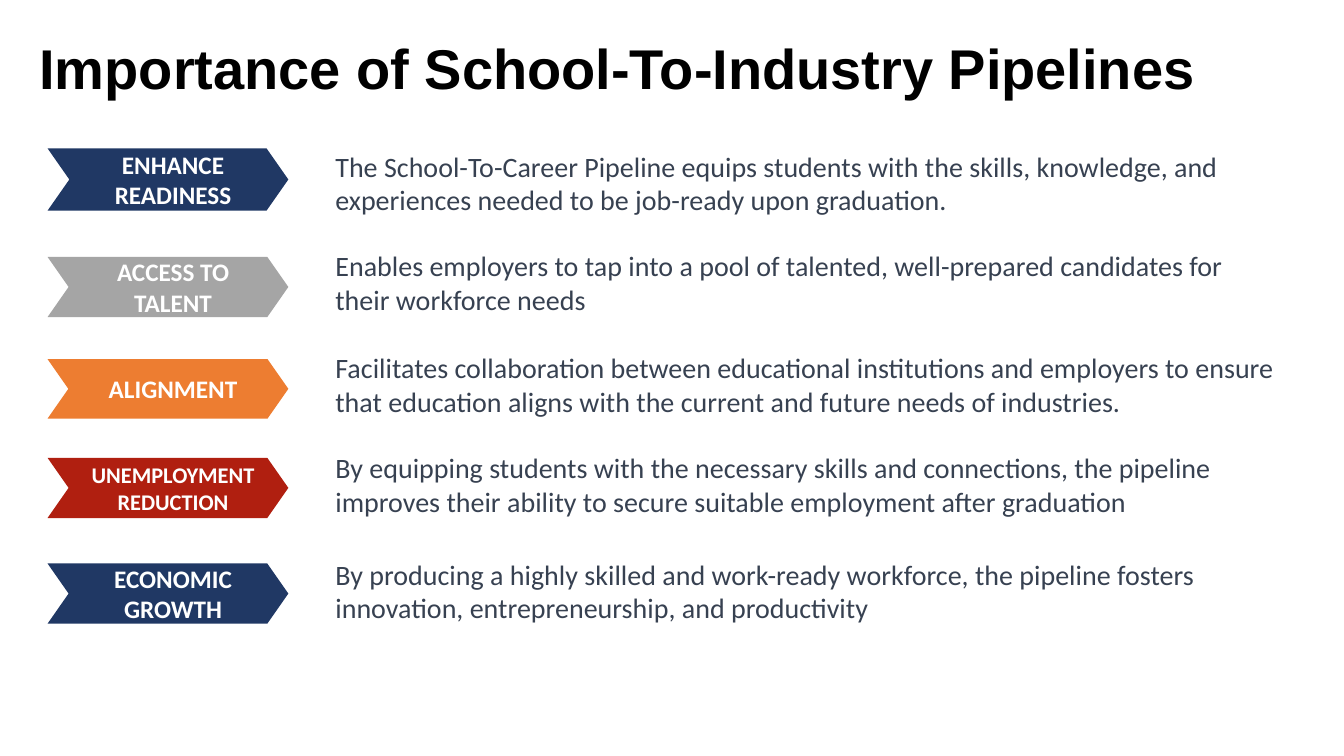
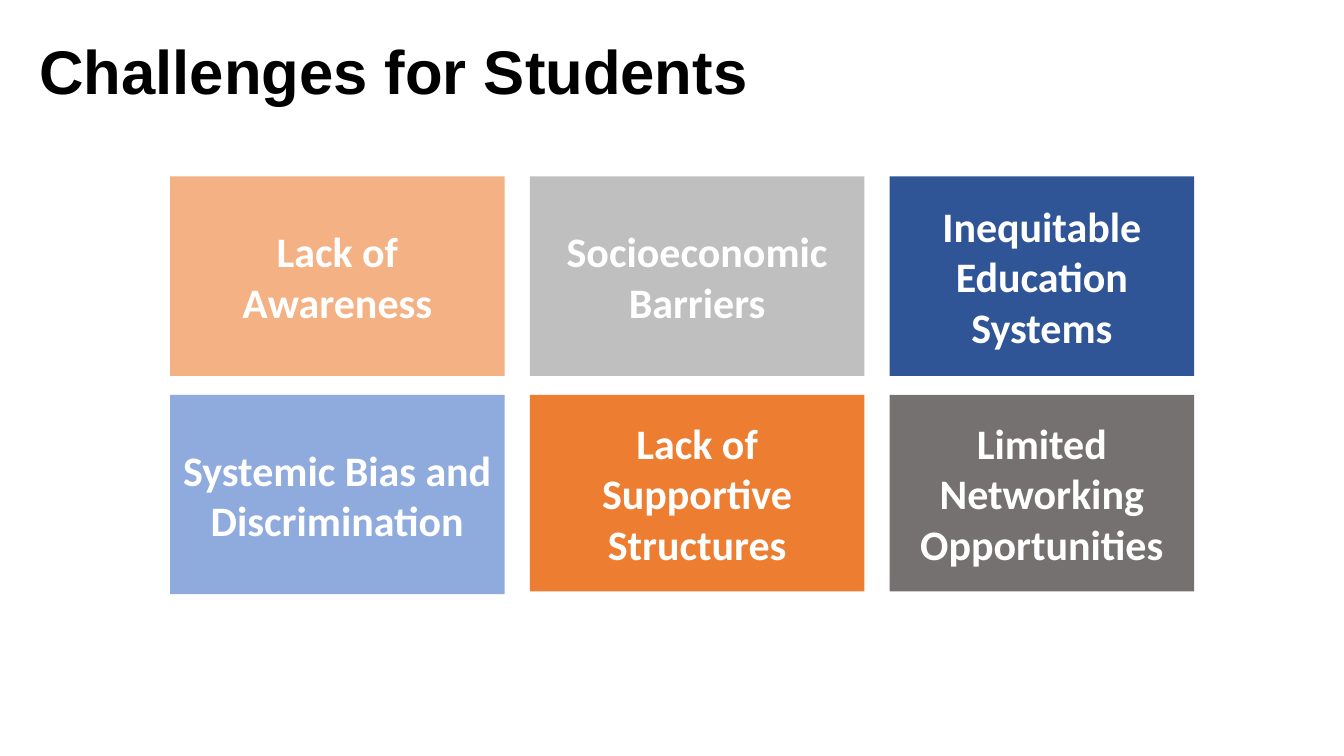
from pptx import Presentation
from pptx.dml.color import RGBColor
from pptx.enum.shapes import MSO_SHAPE
from pptx.enum.text import MSO_ANCHOR, MSO_AUTO_SIZE, PP_ALIGN
from pptx.util import Pt

CHEVRON, RECT = MSO_SHAPE.CHEVRON, MSO_SHAPE.RECTANGLE
TOP, MIDDLE = MSO_ANCHOR.TOP, MSO_ANCHOR.MIDDLE
LEFT, CENTER = PP_ALIGN.LEFT, PP_ALIGN.CENTER
NO_FIT = MSO_AUTO_SIZE.NONE

# Shared colours and fonts
BLACK, WHITE, SLATE = "000000", "FFFFFF", "374151"
NAVY, GREY, ORANGE, RED = "203864", "A5A5A5", "ED7D31", "B01F10"
PEACH, SILVER, BLUE = "F4B183", "BFBFBF", "2F5597"
PALE_BLUE, DARK_GREY = "8FAADC", "767171"
TITLE_FONT, BODY_FONT = "Arial", "Calibri"

# Label, label size, colour, chevron top and height, text top and width, text
BENEFITS = [
    ("ENHANCE\nREADINESS", 18, NAVY, 106, 44.5, 103, 664,
     "The School-To-Career Pipeline equips students with the skills, knowledge, "
     "and experiences needed to be job-ready upon graduation."),
    ("ACCESS TO TALENT", 18, GREY, 183.5, 43, 174, 664,
     "Enables employers to tap into a pool of talented, well-prepared candidates "
     "for their workforce needs"),
    ("ALIGNMENT", 18, ORANGE, 256.5, 42.5, 247, 706,
     "Facilitates collaboration between educational institutions and employers to "
     "ensure that education aligns with the current and future needs of industries."),
    ("UNEMPLOYMENT REDUCTION", 16, RED, 327, 43, 318.5, 664,
     "By equipping students with the necessary skills and connections, the pipeline "
     "improves their ability to secure suitable employment after graduation"),
    ("ECONOMIC\nGROWTH", 18, NAVY, 402.5, 43, 394.5, 706,
     "By producing a highly skilled and work-ready workforce, the pipeline fosters "
     "innovation, entrepreneurship, and productivity"),
]

# Rows of challenge cards: text, colour, height
CHALLENGES = [
    [("Lack of Awareness", PEACH, 142.5),
     ("Socioeconomic Barriers", SILVER, 142.5),
     ("Inequitable Education Systems", BLUE, 142.5)],
    [("Systemic Bias and Discrimination", PALE_BLUE, 142.5),
     ("Lack of Supportive Structures", ORANGE, 140.5),
     ("Limited Networking Opportunities", DARK_GREY, 140.5)],
]
CARD_LEFT, CARD_TOP = 121.5, 126
CARD_WIDTHS = [239, 239, 217.5]
CARD_GAP, ROW_PITCH = 18, 156


def rgb(value):
    return RGBColor.from_string(value)


def write(sp, text, size, color, font=BODY_FONT, bold=False, align=LEFT, anchor=TOP):
    tf = sp.text_frame
    tf.text = text
    tf.word_wrap = True
    tf.auto_size = NO_FIT
    tf.vertical_anchor = anchor
    for p in tf.paragraphs:
        p.alignment = align
        p.font.name, p.font.size, p.font.bold = font, Pt(size), bold
        p.font.color.rgb = rgb(color)
    return tf


def add_titled_slide(prs, title, size):
    s = prs.slides.add_slide(prs.slide_layouts[5])
    sp = s.shapes.title
    sp.left, sp.top, sp.width, sp.height = Pt(21), Pt(26), Pt(901), Pt(80)
    tf = write(sp, title, size, BLACK, TITLE_FONT, bold=True)
    tf.paragraphs[0].line_spacing = 0.9
    return s


def add_label(s, kind, left, top, width, height, fill, text, size):
    sp = s.shapes.add_shape(kind, Pt(left), Pt(top), Pt(width), Pt(height))
    sp.shadow.inherit = False
    sp.fill.solid()
    sp.fill.fore_color.rgb = rgb(fill)
    sp.line.fill.background()
    write(sp, text, size, WHITE, bold=True, align=CENTER, anchor=MIDDLE)
    return sp


def add_chevron(s, top, height, fill, text, size):
    sp = add_label(s, CHEVRON, 34, top, 172, height, fill, text, size)
    sp.adjustments[0] = 0.35
    sp.text_frame.margin_left = Pt(14.4)


def add_text(s, left, top, width, height, text):
    sp = s.shapes.add_textbox(Pt(left), Pt(top), Pt(width), Pt(height))
    write(sp, text, 20, SLATE)


def build_benefits(prs):
    s = add_titled_slide(prs, "Importance of School-To-Industry Pipelines", 40)
    for label, size, fill, top, height, text_top, text_width, text in BENEFITS:
        add_chevron(s, top, height, fill, label, size)
        add_text(s, 232.5, text_top, text_width, 55.5, text)


def build_challenges(prs):
    s = add_titled_slide(prs, "Challenges for Students", 44)
    for row, cards in enumerate(CHALLENGES):
        left = CARD_LEFT
        for width, (text, fill, height) in zip(CARD_WIDTHS, cards):
            add_label(s, RECT, left, CARD_TOP + row * ROW_PITCH,
                      width, height, fill, text, 30)
            left += width + CARD_GAP


def main():
    prs = Presentation()
    prs.slide_width, prs.slide_height = Pt(960), Pt(540)
    build_benefits(prs)
    build_challenges(prs)
    prs.save("out.pptx")


if __name__ == "__main__":
    main()
